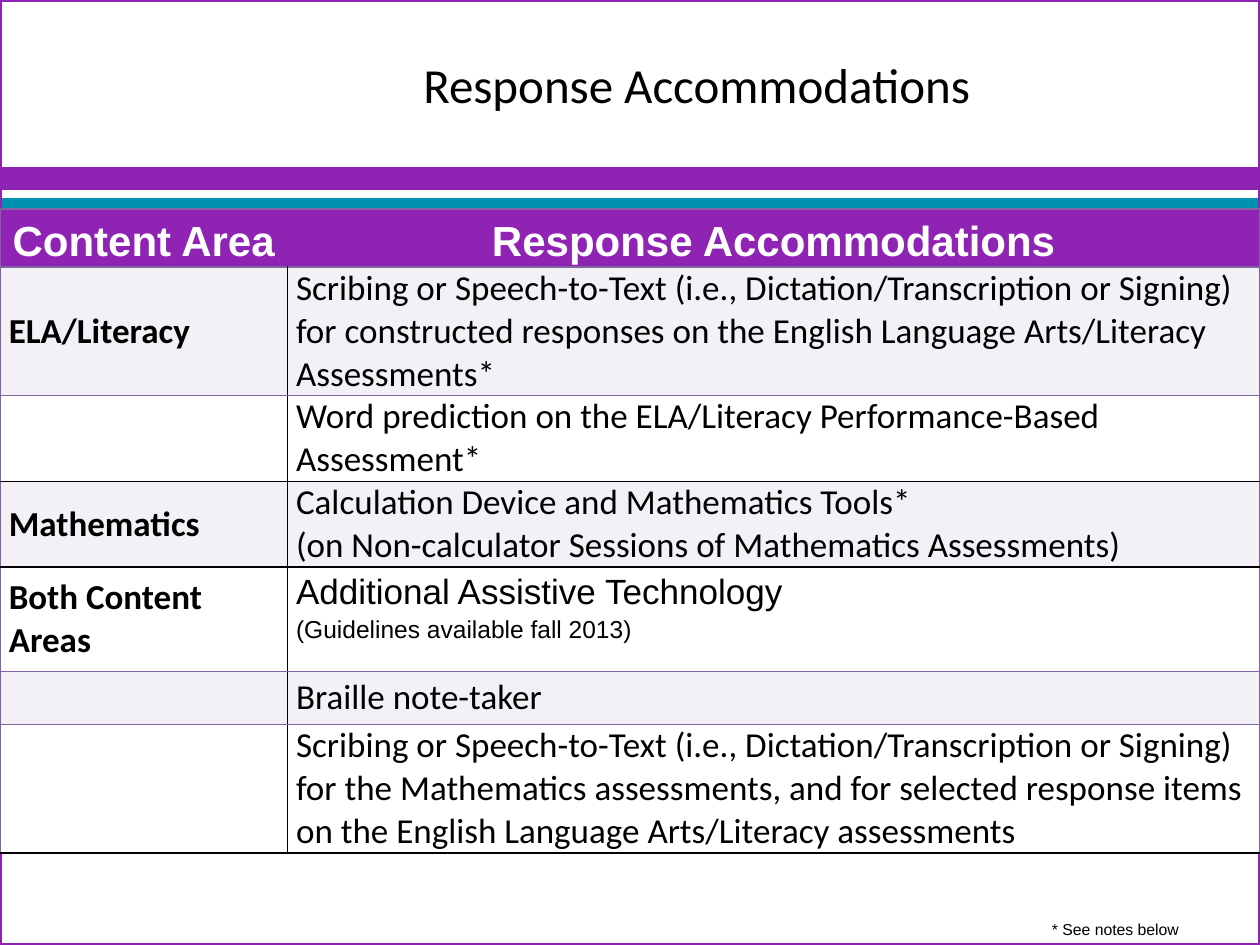
from lxml import etree
from pptx import Presentation
from pptx.dml.color import RGBColor
from pptx.enum.shapes import MSO_SHAPE
from pptx.enum.text import MSO_ANCHOR, PP_ALIGN
from pptx.oxml.ns import qn
from pptx.util import Inches, Pt

PURPLE, TEAL, RULE, BLACK, WHITE = "8F23B3", "0091B2", "8064A2", "000000", "FFFFFF"
STRIPES = ["F3F0F6", WHITE]

HEAD = dict(size=24, name="Arial", color=WHITE, bold=True)
LABEL = dict(size=20, name="Calibri", color=BLACK, bold=True)
BODY = dict(LABEL, bold=False)
TECH = dict(BODY, name="Arial")
SMALL = dict(TECH, size=14)

BANDS = [(1.33, PURPLE), (1.58, TEAL)]
COLUMNS = [2.28, 7.72]
HEADER = ["Content Area", "Response Accommodations"]
# height, rule colour below, label, [(line, format)]
ROWS = [
    (1.02, RULE, "ELA/Literacy", [
        ("Scribing or Speech-to-Text (i.e., Dictation/Transcription or Signing) for "
         "constructed responses on the English Language Arts/Literacy Assessments*", BODY)]),
    (0.68, BLACK, "", [
        ("Word prediction on the ELA/Literacy Performance-Based Assessment*", BODY)]),
    (0.68, BLACK, "Mathematics", [
        ("Calculation Device and Mathematics Tools*", BODY),
        ("(on Non-calculator Sessions of Mathematics Assessments)", BODY)]),
    (0.83, RULE, "Both Content Areas", [
        ("Additional Assistive Technology", TECH),
        ("(Guidelines available fall 2013)", SMALL)]),
    (0.42, RULE, "", [("Braille note-taker", BODY)]),
    (1.02, BLACK, "", [
        ("Scribing or Speech-to-Text (i.e., Dictation/Transcription or Signing) for the "
         "Mathematics assessments, and for selected response items on the English "
         "Language Arts/Literacy assessments", BODY)]),
]
HEADER_HEIGHT = 0.42


def rgb(color):
    return RGBColor.from_string(color)


def write(tf, lines, align=PP_ALIGN.LEFT):
    tf.word_wrap = True
    for i, (text, fmt) in enumerate(lines):
        p = tf.paragraphs[0] if i == 0 else tf.add_paragraph()
        p.alignment = align
        p.line_spacing = 1.15 if fmt in (HEAD, TECH, SMALL) else 1.0
        r = p.add_run()
        r.text = text
        r.font.size = Pt(fmt["size"])
        r.font.color.rgb = rgb(fmt["color"])
        for key in ("name", "bold"):
            setattr(r.font, key, fmt[key])


def add_rect(slide, box, fill, line, width):
    s = slide.shapes.add_shape(MSO_SHAPE.RECTANGLE, *map(Inches, box))
    s.shadow.inherit = False
    if fill:
        s.fill.solid()
        s.fill.fore_color.rgb = rgb(fill)
    else:
        s.fill.background()
    s.line.color.rgb = rgb(line)
    s.line.width = Pt(width)


def add_text(slide, box, lines, anchor):
    tf = slide.shapes.add_textbox(*map(Inches, box)).text_frame
    tf.vertical_anchor = anchor
    write(tf, lines)
    return tf


def set_borders(cell, **sides):
    """Draw 1 pt cell borders; a side given None has no line."""
    tcPr = cell._tc.get_or_add_tcPr()
    for i, (side, color) in enumerate(sides.items()):
        ln = etree.Element(qn(f"a:ln{side}"), w=str(Pt(1)))
        if color:
            fill = etree.SubElement(ln, qn("a:solidFill"))
            etree.SubElement(fill, qn("a:srgbClr"), val=color)
        else:
            etree.SubElement(ln, qn("a:noFill"))
        tcPr.insert(i, ln)


def fill_cell(cell, lines, fill, align=PP_ALIGN.LEFT):
    cell.fill.solid()
    cell.fill.fore_color.rgb = rgb(fill)
    cell.margin_left = cell.margin_right = Inches(0.07)
    cell.margin_top = cell.margin_bottom = 0
    cell.vertical_anchor = MSO_ANCHOR.TOP if lines[0][1] is TECH else MSO_ANCHOR.MIDDLE
    write(cell.text_frame, lines, align)


def add_table(slide):
    heights = [HEADER_HEIGHT] + [row[0] for row in ROWS]
    table = slide.shapes.add_table(
        len(heights), len(COLUMNS), 0, Inches(1.66),
        Inches(sum(COLUMNS)), Inches(sum(heights))).table
    for col, width in zip(table.columns, COLUMNS):
        col.width = Inches(width)
    for row, height in zip(table.rows, heights):
        row.height = Inches(height)

    for c, text in enumerate(HEADER):
        fill_cell(table.cell(0, c), [(text, HEAD)], PURPLE, PP_ALIGN.CENTER)
    for r, (_, _, label, lines) in enumerate(ROWS, 1):
        for c, content in enumerate([[(label, LABEL)], lines]):
            fill_cell(table.cell(r, c), content, STRIPES[(r - 1) % 2])

    rules = [RULE, RULE] + [row[1] for row in ROWS]
    for r, (top, bottom) in enumerate(zip(rules, rules[1:])):
        middle = BLACK if r else None
        set_borders(table.cell(r, 0), L=RULE, R=middle, T=top, B=bottom)
        set_borders(table.cell(r, 1), L=middle, R=RULE, T=top, B=bottom)


def main():
    prs = Presentation()
    prs.slide_width, prs.slide_height = Inches(10), Inches(7.5)
    slide = prs.slides.add_slide(prs.slide_layouts[6])
    for top, color in BANDS:
        add_rect(slide, (0, top, 10, 0.17), color, color, 0.75)
    add_rect(slide, (0, 0, 10, 7.5), None, PURPLE, 2.25)
    title = add_text(slide, (3.08, 0, 6.92, 1.33),
                     [("Response Accommodations", dict(BODY, size=28))], MSO_ANCHOR.MIDDLE)
    title.margin_left = Inches(0.28)
    add_table(slide)
    add_text(slide, (8.25, 7.25, 1.58, 0.25),
             [("* See notes below", dict(TECH, size=9))], MSO_ANCHOR.TOP)
    prs.save("out.pptx")


if __name__ == "__main__":
    main()
